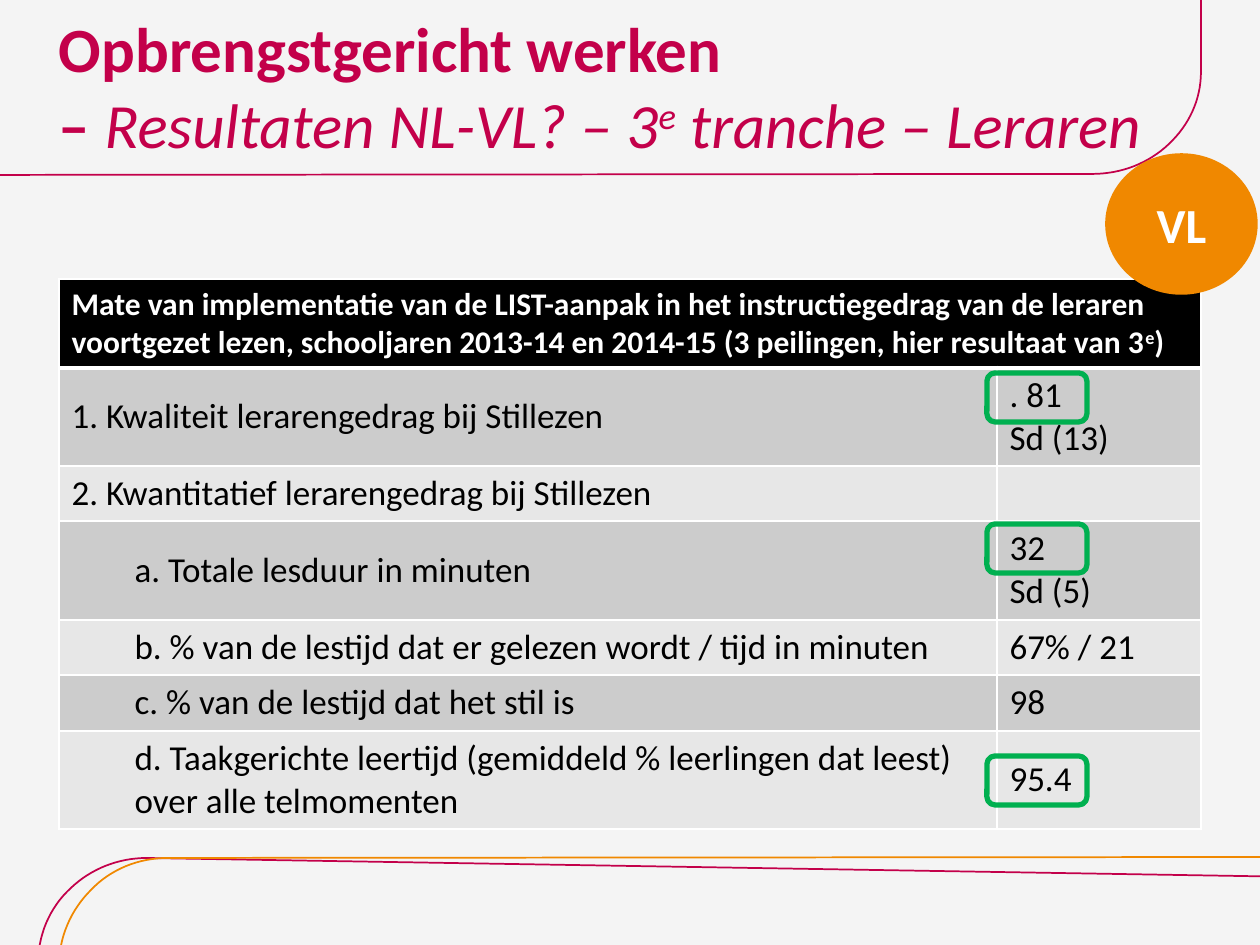
from lxml import etree
from pptx import Presentation
from pptx.dml.color import RGBColor
from pptx.enum.shapes import MSO_SHAPE
from pptx.enum.text import MSO_ANCHOR, PP_ALIGN
from pptx.oxml.ns import qn
from pptx.util import Emu, Pt

PX = 914400 // 126
CRIMSON = RGBColor(0xC3, 0x00, 0x4A)
ORANGE = RGBColor(0xF0, 0x88, 0x00)
GREEN = RGBColor(0x00, 0xB0, 0x50)
WHITE = RGBColor(0xFF, 0xFF, 0xFF)
BLACK = RGBColor(0x00, 0x00, 0x00)
DARK_BAND = RGBColor(0xCC, 0xCC, 0xCC)
LIGHT_BAND = RGBColor(0xE7, 0xE7, 0xE7)
BACKGROUND = RGBColor(0xF4, 0xF4, 0xF4)
MIDDLE = MSO_ANCHOR.MIDDLE
FONT = "Calibri"


def set_font(font, size, color, bold=False):
    font.name, font.size, font.bold = FONT, Pt(size), bold
    font.color.rgb = color


def fill_cell(cell, color, bottom_width=1):
    cell.fill.solid()
    cell.fill.fore_color.rgb = color
    properties = cell._tc.get_or_add_tcPr()
    for position, side in enumerate(("lnL", "lnR", "lnT", "lnB")):
        width = bottom_width if side == "lnB" else 1
        border = etree.Element(qn(f"a:{side}"), w=str(Pt(width)))
        solid = etree.SubElement(border, qn("a:solidFill"))
        etree.SubElement(solid, qn("a:srgbClr"), val=str(WHITE))
        properties.insert(position, border)


prs = Presentation()
prs.slide_width, prs.slide_height = Emu(1260 * PX), Emu(945 * PX)
slide = prs.slides.add_slide(prs.slide_layouts[6])
slide.background.fill.solid()
slide.background.fill.fore_color.rgb = BACKGROUND
shapes = slide.shapes

# Curved frame lines: start, two Bézier pieces, end
frame_lines = [
    (CRIMSON, (34, 1120), [[(38, 965), (38, 936), (49, 908), (71, 888)],
                           [(71, 888), (91, 869), (118, 858), (147, 858)]], (1298, 877)),
    (ORANGE, (59, 1123), [[(59, 966), (59, 937), (71, 910), (91, 890)],
                          [(91, 890), (111, 869), (139, 858), (168, 858)]], (1318, 857)),
    (CRIMSON, (1201, -73), [[(1201, 72), (1201, 100), (1189, 125), (1169, 144)],
                            [(1169, 144), (1149, 163), (1122, 174), (1092, 174)]], (-58, 175)),
]
STEPS = 16
for color, start, curves, end in frame_lines:
    points = []
    for curve in curves:
        for step in range(STEPS + 1):
            t = step / STEPS
            weights = ((1 - t) ** 3, 3 * t * (1 - t) ** 2, 3 * t * t * (1 - t), t ** 3)
            points.append([sum(w * p[axis] for w, p in zip(weights, curve)) for axis in (0, 1)])
    builder = shapes.build_freeform(start[0] * PX, start[1] * PX, scale=1.0)
    builder.add_line_segments([(round(x * PX), round(y * PX)) for x, y in points + [end]], close=False)
    frame = builder.convert_to_shape()
    frame.shadow.inherit = False
    frame.fill.background()
    frame.line.color.rgb = color
    frame.line.width = Pt(1)

# Title
title = shapes.add_textbox(59 * PX, 0, 1142 * PX, 170 * PX).text_frame
title.word_wrap = True
title.vertical_anchor = MIDDLE
title.margin_left = title.margin_right = 0
heading = title.paragraphs[0]
set_font(heading.font, 36, CRIMSON, True)
heading.add_run().text = "Opbrengstgericht werken"
heading.add_line_break()
heading.add_run().text = "– "
for text, raised in (("Resultaten NL-VL? – 3", False), ("e", True), (" tranche – Leraren", False)):
    run = heading.add_run()
    run.text = text
    run.font.bold, run.font.italic = False, True
    if raised:
        run.font._element.set("baseline", "30000")

# Results table: label, level, values
results = [
    ("1. Kwaliteit lerarengedrag bij Stillezen", 0, ". 81\nSd (13)"),
    ("2. Kwantitatief lerarengedrag bij Stillezen", 0, ""),
    ("a. Totale lesduur in minuten", 1, "32\nSd (5)"),
    ("b. % van de lestijd dat er gelezen wordt / tijd in minuten", 1, "67% / 21"),
    ("c. % van de lestijd dat het stil is", 1, "98"),
    ("d. Taakgerichte leertijd (gemiddeld % leerlingen dat leest) over alle telmomenten", 1, "95.4"),
]
row_heights = [89, 98, 55, 99, 55, 56, 98]
table = shapes.add_table(len(row_heights), 2, 59 * PX, 279 * PX, 1142 * PX, sum(row_heights) * PX).table
for column, width in zip(table.columns, (938, 204)):
    column.width = Emu(width * PX)
for row, height in zip(table.rows, row_heights):
    row.height = Emu(height * PX)

header = table.cell(0, 0)
header.merge(table.cell(0, 1))
for cell in table.rows[0].cells:
    fill_cell(cell, BLACK, 3)
caption = header.text_frame.paragraphs[0]
set_font(caption.font, 18, WHITE, True)
caption.add_run().text = (
    "Mate van implementatie van de LIST-aanpak in het instructiegedrag van de leraren "
    "voortgezet lezen, schooljaren 2013-14 en 2014-15 (3 peilingen, hier resultaat van 3")
ordinal = caption.add_run()
ordinal.text = "e"
ordinal.font._element.set("baseline", "30000")
caption.add_run().text = ")"

for index, (label, level, values) in enumerate(results, start=1):
    for cell, text in zip(table.rows[index].cells, (label, values)):
        fill_cell(cell, DARK_BAND if index % 2 else LIGHT_BAND)
        cell.vertical_anchor = MIDDLE
        cell.text = text
        for paragraph in cell.text_frame.paragraphs:
            set_font(paragraph.font, 20, BLACK)
    if level:
        indent = table.cell(index, 0).text_frame.paragraphs[0]
        indent.level = level
        indent._p.get_or_add_pPr().set("marL", str(63 * PX))

# Country badge
badge = shapes.add_shape(MSO_SHAPE.OVAL, 1107 * PX, 155 * PX, 149 * PX, 138 * PX)
badge.shadow.inherit = False
badge.fill.solid()
badge.fill.fore_color.rgb = ORANGE
badge.line.color.rgb = ORANGE
badge.line.width = Pt(2)
badge.text_frame.text = "VL"
badge.text_frame.vertical_anchor = MIDDLE
country = badge.text_frame.paragraphs[0]
country.alignment = PP_ALIGN.CENTER
set_font(country.font, 28, WHITE, True)

# Highlights around the key values
for top in (373, 524, 756):
    highlight = shapes.add_shape(MSO_SHAPE.ROUNDED_RECTANGLE, 987 * PX, top * PX, 100 * PX, 49 * PX)
    highlight.shadow.inherit = False
    highlight.fill.background()
    highlight.line.color.rgb = GREEN
    highlight.line.width = Pt(3)

prs.save("out.pptx")
